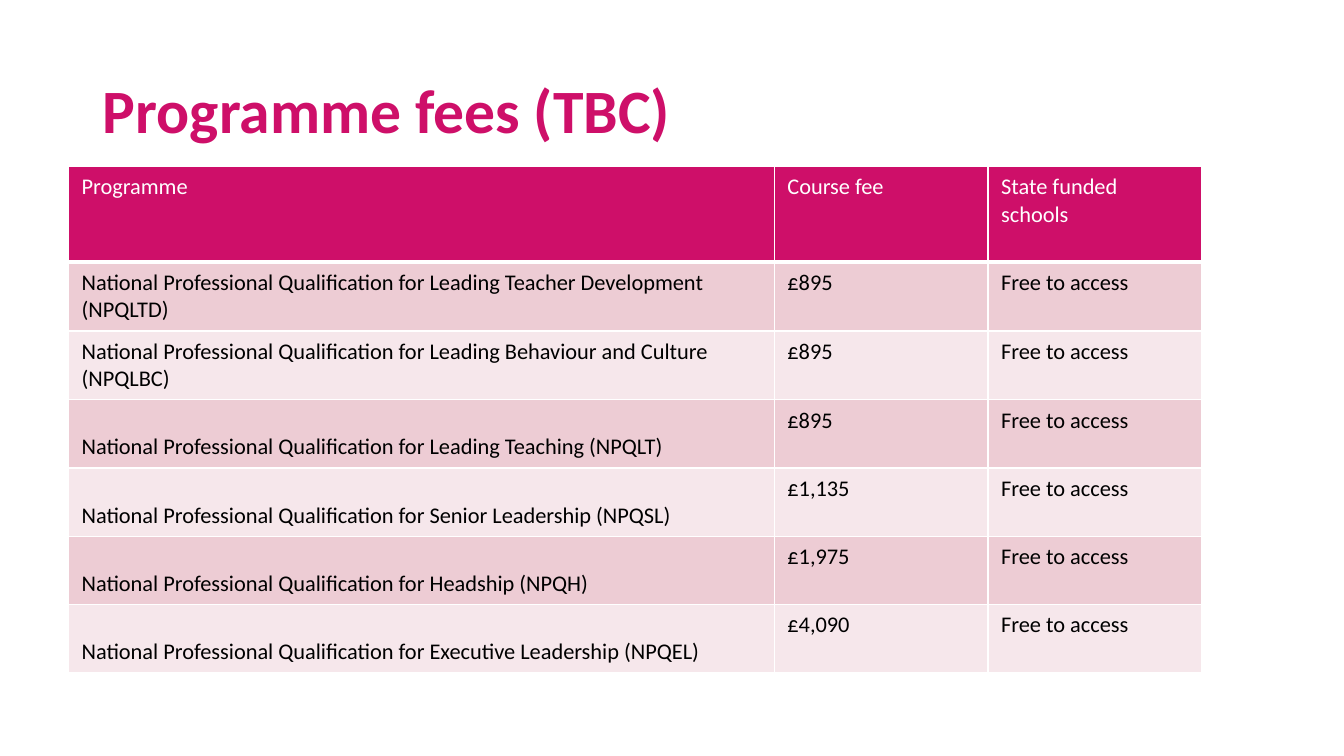
from lxml import etree
from pptx import Presentation
from pptx.dml.color import RGBColor
from pptx.enum.text import MSO_ANCHOR, PP_ALIGN
from pptx.oxml.ns import qn
from pptx.util import Inches, Pt

TITLE = "Programme fees (TBC)"
HEADINGS = ("Programme", "Course fee", "State funded schools")
QUALIFICATION = "National Professional Qualification for "
ACCESS = "Free to access"
FEES = [
    ("Leading Teacher Development (NPQLTD)", "£895"),
    ("Leading Behaviour and Culture (NPQLBC)", "£895"),
    ("Leading Teaching (NPQLT)", "£895"),
    ("Senior Leadership (NPQSL)", "£1,135"),
    ("Headship (NPQH)", "£1,975"),
    ("Executive Leadership (NPQEL)", "£4,090"),
]

FONT = "Calibri"
MAGENTA = RGBColor(0xCE, 0x0F, 0x69)
WHITE = RGBColor(0xFF, 0xFF, 0xFF)
BLACK = RGBColor(0, 0, 0)
BANDS = (RGBColor(0xED, 0xCC, 0xD4), RGBColor(0xF6, 0xE7, 0xEB))

LEFT, TOP, BOTTOM = 0.68, 1.65, 6.66
COLUMN_WIDTHS = (7, 2.12, 2.12)
HEADER_HEIGHT = 0.95
ROW_HEIGHT = (BOTTOM - TOP - HEADER_HEIGHT) / len(FEES)


def add_borders(cell, bottom_width):
    """Draw white cell edges; call before the cell is filled."""
    widths = {"a:lnL": 1, "a:lnR": 1, "a:lnT": 1, "a:lnB": bottom_width}
    for edge, width in widths.items():
        line = etree.SubElement(cell._tc.get_or_add_tcPr(), qn(edge), w=str(Pt(width)))
        fill = etree.SubElement(line, qn("a:solidFill"))
        etree.SubElement(fill, qn("a:srgbClr"), val=str(WHITE))


def format_cell(cell, words, fill, color, anchor, bottom_width):
    cell.text = words
    cell.vertical_anchor = anchor
    cell.margin_left = cell.margin_right = Inches(0.13)
    cell.margin_top = cell.margin_bottom = Inches(0.07)
    add_borders(cell, bottom_width)
    cell.fill.solid()
    cell.fill.fore_color.rgb = fill
    font = cell.text_frame.paragraphs[0].font
    font.name, font.size, font.bold = FONT, Pt(16), False
    font.color.rgb = color


def add_title(slide):
    title = slide.shapes.title
    title.left, title.top = Inches(0.92), Inches(0.4)
    title.width, title.height = Inches(11.5), Inches(1.45)
    title.text_frame.text = TITLE
    title.text_frame.vertical_anchor = MSO_ANCHOR.MIDDLE
    heading = title.text_frame.paragraphs[0]
    heading.alignment = PP_ALIGN.LEFT
    heading.line_spacing = 0.9
    heading.font.name, heading.font.size, heading.font.bold = FONT, Pt(44), True
    heading.font.color.rgb = MAGENTA


def add_fee_table(slide):
    rows = [HEADINGS] + [(QUALIFICATION + name, fee, ACCESS) for name, fee in FEES]
    fees = slide.shapes.add_table(
        len(rows), len(HEADINGS), Inches(LEFT), Inches(TOP),
        Inches(sum(COLUMN_WIDTHS)), Inches(BOTTOM - TOP)).table
    for column, width in zip(fees.columns, COLUMN_WIDTHS):
        column.width = Inches(width)
    for r, row in enumerate(rows):
        header = r == 0
        fees.rows[r].height = Inches(HEADER_HEIGHT if header else ROW_HEIGHT)
        for c, words in enumerate(row):
            programme = c == 0 and not header
            format_cell(
                fees.cell(r, c), words,
                fill=MAGENTA if header else BANDS[(r - 1) % 2],
                color=WHITE if header else BLACK,
                anchor=MSO_ANCHOR.BOTTOM if programme else MSO_ANCHOR.TOP,
                bottom_width=3 if header else 1)


def main():
    deck = Presentation()
    deck.slide_width, deck.slide_height = Inches(13.33), Inches(7.5)
    slide = deck.slides.add_slide(deck.slide_layouts[5])
    add_title(slide)
    add_fee_table(slide)
    deck.save("out.pptx")


if __name__ == "__main__":
    main()
